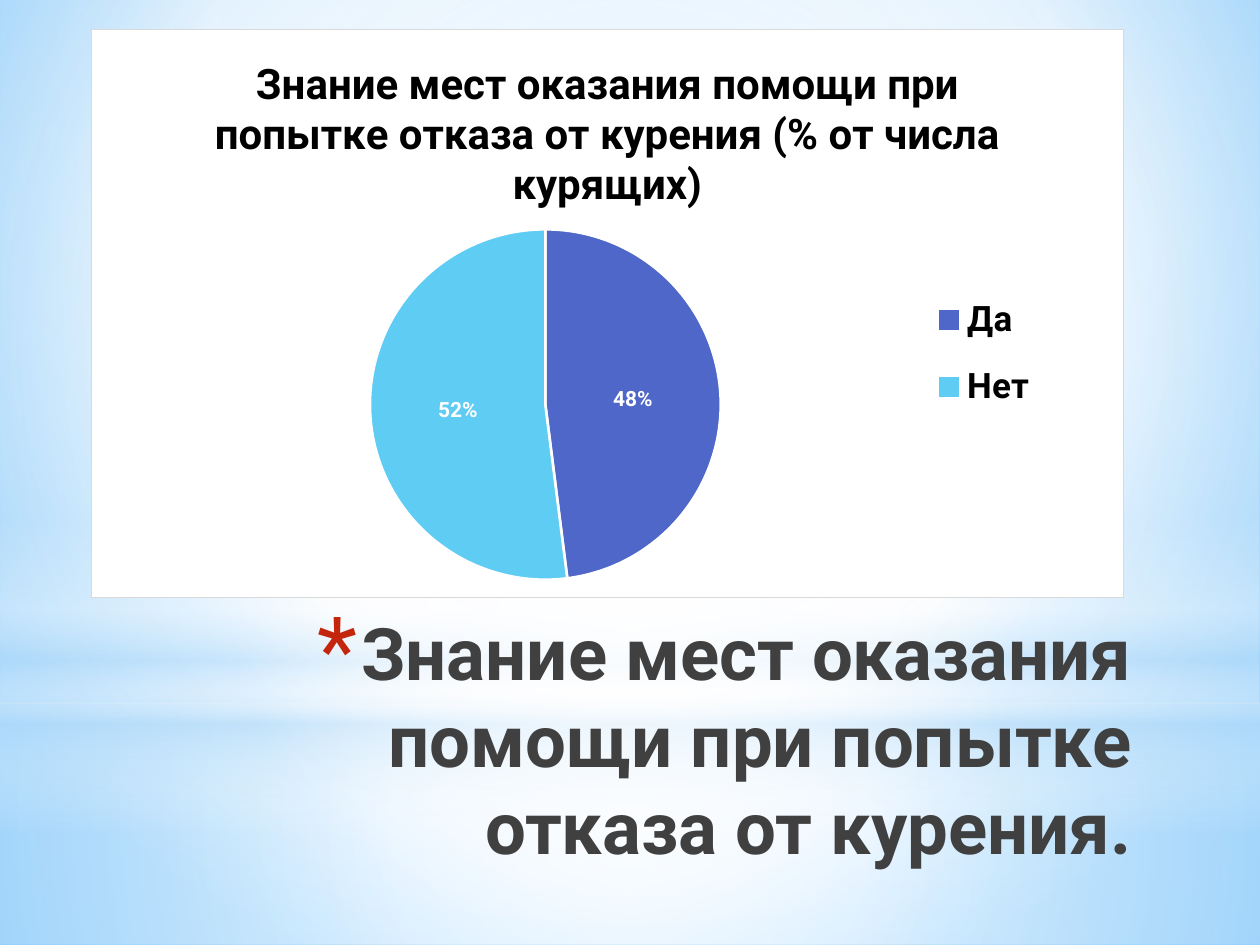
from dataclasses import dataclass

from lxml import etree
from pptx import Presentation
from pptx.chart.data import CategoryChartData
from pptx.dml.color import RGBColor
from pptx.enum.chart import XL_CHART_TYPE, XL_LABEL_POSITION, XL_LEGEND_POSITION
from pptx.enum.shapes import MSO_SHAPE
from pptx.enum.text import MSO_ANCHOR, PP_ALIGN
from pptx.oxml import parse_xml
from pptx.oxml.ns import nsdecls, qn
from pptx.util import Inches, Pt

PIE = XL_CHART_TYPE.PIE
CENTER = XL_LABEL_POSITION.CENTER
LEGEND_RIGHT = XL_LEGEND_POSITION.RIGHT
RECT, OVAL = MSO_SHAPE.RECTANGLE, MSO_SHAPE.OVAL
TOP, RIGHT = MSO_ANCHOR.TOP, PP_ALIGN.RIGHT


@dataclass(frozen=True)
class Theme:
    font: str = "Roboto"
    text: str = "404040"
    bullet: str = "C3260C"
    black: str = "000000"
    white: str = "FFFFFF"
    mist: str = "B4DCFA"
    sky: str = "9ED5FF"
    deep_sky: str = "5BB9FF"
    border: str = "D9D9D9"
    slices: tuple = ("4E67C8", "5ECCF3")
    heading_size: float = 41.4
    chart_title_size: float = 24
    legend_size: float = 20
    label_size: float = 12
    base_size: float = 10


T = Theme()


def set_font(font, size, color, bold=True):
    font.name, font.size, font.bold = T.font, Pt(size), bold
    font.color.rgb = RGBColor.from_string(color)


def set_gradient(parent, stops, focus=None, angle=0):
    """Swap the solid fill in parent for stops of (position, colour, opacity)."""
    gs = "".join(
        f'<a:gs pos="{pos * 1000}"><a:srgbClr val="{color}">'
        f'<a:alpha val="{opacity * 1000}"/></a:srgbClr></a:gs>'
        for pos, color, opacity in stops)
    if focus:
        sides = " ".join(f'{k}="{v * 1000}"' for k, v in zip("ltrb", focus))
        way = f'<a:path path="circle"><a:fillToRect {sides}/></a:path>'
    else:
        way = f'<a:lin ang="{angle * 60000}" scaled="0"/>'
    grad = parse_xml(f'<a:gradFill {nsdecls("a")} rotWithShape="1">'
                     f'<a:gsLst>{gs}</a:gsLst>{way}</a:gradFill>')
    parent.replace(parent.find(qn("a:solidFill")), grad)


def add_glow(s, kind, top, height, stops, **direction):
    sp = s.shapes.add_shape(kind, 0, Inches(top), Inches(10), Inches(height))
    sp.shadow.inherit = False
    sp.line.fill.background()
    sp.fill.solid()
    set_gradient(sp._element.spPr, stops, **direction)


def add_background(s):
    s.background.fill.solid()
    set_gradient(s._element.find(".//" + qn("p:bgPr")),
                 [(0, T.sky, 100), (60, T.white, 100), (100, T.deep_sky, 100)],
                 focus=(20, 10, 20, 60))
    middle = (50, 50, 50, 50)
    add_glow(s, RECT, 5.58, 1.92,
             [(0, T.white, 91), (37, T.white, 76), (100, T.mist, 79)], focus=middle)
    add_glow(s, RECT, 0, 5.58,
             [(0, T.white, 89), (48, T.white, 62), (100, T.mist, 79)], focus=middle)
    add_glow(s, RECT, 4.12, 2.5,
             [(0, T.white, 0), (29, T.white, 30), (45, T.mist, 40),
              (55, T.white, 26), (65, T.mist, 60), (100, T.white, 0)], angle=90)
    add_glow(s, OVAL, 1.75, 5.58,
             [(0, T.white, 100), (56, T.white, 0)], focus=middle)


def add_heading(s, text):
    sp = s.shapes.add_textbox(Inches(1.96), Inches(4.78), Inches(7.12), Inches(1.25))
    tf = sp.text_frame
    tf.word_wrap, tf.vertical_anchor = True, TOP
    p = tf.paragraphs[0]
    p.alignment = RIGHT
    r = p.add_run()
    r.text = text
    set_font(r.font, T.heading_size, T.text)

    # Hanging asterisk bullet
    pPr = p._p.get_or_add_pPr()
    pPr.set("marL", str(Inches(0.35)))
    pPr.set("indent", str(Inches(-0.35)))
    color = etree.SubElement(pPr, qn("a:buClr"))
    etree.SubElement(color, qn("a:srgbClr"), val=T.bullet)
    etree.SubElement(pPr, qn("a:buSzPct"), val="128000")
    etree.SubElement(pPr, qn("a:buFont"), typeface=T.font)
    etree.SubElement(pPr, qn("a:buChar"), char="*")


def chart_layout(x, y, w, h, inner=False):
    target = '<c:layoutTarget val="inner"/>' if inner else ""
    return parse_xml(
        f'<c:layout {nsdecls("c")}><c:manualLayout>{target}'
        '<c:xMode val="edge"/><c:yMode val="edge"/>'
        f'<c:x val="{x}"/><c:y val="{y}"/><c:w val="{w}"/><c:h val="{h}"/>'
        '</c:manualLayout></c:layout>')


def set_chart_frame(chart):
    spPr = parse_xml(
        f'<c:spPr {nsdecls("c", "a")}>'
        f'<a:solidFill><a:srgbClr val="{T.white}"/></a:solidFill>'
        f'<a:ln w="{Pt(0.75)}"><a:solidFill><a:srgbClr val="{T.border}"/>'
        '</a:solidFill></a:ln></c:spPr>')
    chart._chartSpace.find(qn("c:chart")).addnext(spPr)


def add_pie(s, title, categories, values):
    data = CategoryChartData()
    data.categories = categories
    data.add_series("Series 1", values)
    chart = s.shapes.add_chart(PIE, Inches(0.72), Inches(0.23),
                               Inches(8.2), Inches(4.52), data).chart
    set_font(chart.font, T.base_size, T.black, bold=False)
    set_chart_frame(chart)

    # Title
    r = chart.chart_title.text_frame.paragraphs[0].add_run()
    r.text = title
    set_font(r.font, T.chart_title_size, T.black)
    chart.chart_title.include_in_layout = False

    # Legend
    chart.has_legend = True
    legend = chart.legend
    legend.position, legend.include_in_layout = LEGEND_RIGHT, False
    set_font(legend.font, T.legend_size, T.black)
    legend._element.find(qn("c:legendPos")).addnext(
        chart_layout(0.8, 0.43, 0.13, 0.28))

    # Slices and their labels
    plot = chart.plots[0]
    plot.vary_by_categories = True
    area = chart._chartSpace.find(".//" + qn("c:plotArea"))
    for old in area.findall(qn("c:layout")):
        area.remove(old)
    area.insert(0, chart_layout(0.27, 0.35, 0.34, 0.62, inner=True))
    for i, color in enumerate(T.slices):
        fmt = plot.series[0].points[i].format
        fmt.fill.solid()
        fmt.fill.fore_color.rgb = RGBColor.from_string(color)
        fmt.line.color.rgb = RGBColor.from_string(T.white)
        fmt.line.width = Pt(1.5)
    plot.has_data_labels = True
    labels = plot.data_labels
    labels.show_percentage, labels.show_value = True, False
    labels.number_format, labels.number_format_is_linked = "0%", False
    labels.position = CENTER
    set_font(labels.font, T.label_size, T.white)


def main():
    prs = Presentation()
    prs.slide_width, prs.slide_height = Inches(10), Inches(7.5)
    s = prs.slides.add_slide(prs.slide_layouts[6])
    add_background(s)
    add_heading(s, "Знание мест оказания помощи при попытке отказа от курения.")
    add_pie(s, "Знание мест оказания помощи при попытке отказа от курения "
               "(% от числа курящих)", ["Да ", "Нет"], [48, 52])
    prs.save("out.pptx")


if __name__ == "__main__":
    main()
